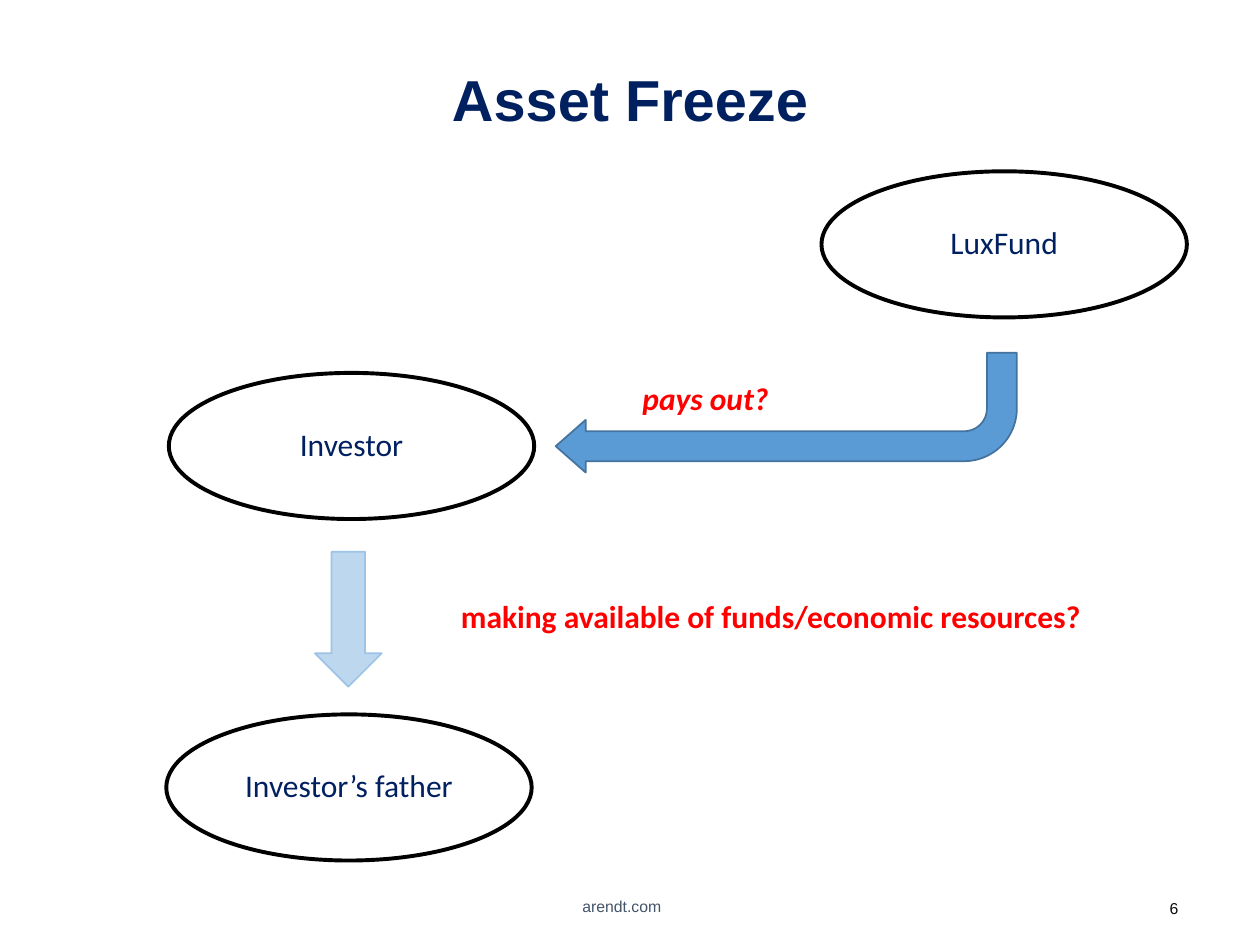
import pptx
import pptx.dml.color
import pptx.enum.shapes
import pptx.enum.text
import pptx.util

Inches = pptx.util.Inches
Pt = pptx.util.Pt
Shape = pptx.enum.shapes.MSO_SHAPE
Align = pptx.enum.text.PP_ALIGN
Anchor = pptx.enum.text.MSO_ANCHOR

NAVY = "002060"
RED = "FF0000"


def color(code):
    return pptx.dml.color.RGBColor.from_string(code)


class Diagram:
    """Holds the style and the slide being drawn."""

    body_font = "Calibri"
    head_font = "Arial"
    body_size = 18
    oval_size = (2.9, 1.16)

    def __init__(self, page):
        self.page = page

    def set_text(self, shape, text, size, code, font, align, anchor,
                 bold=False, italic=False, spacing=1.0):
        frame = shape.text_frame
        frame.word_wrap = True
        frame.vertical_anchor = anchor
        para = frame.paragraphs[0]
        para.text = text
        para.alignment = align
        para.line_spacing = spacing
        para.font.name = font
        para.font.size = Pt(size)
        para.font.bold = bold
        para.font.italic = italic
        para.font.color.rgb = color(code)

    def label(self, place, text, size=body_size, code=RED, font=body_font,
              align=Align.LEFT, anchor=Anchor.TOP, **style):
        box = self.page.shapes.add_textbox(*map(Inches, place))
        self.set_text(box, text, size, code, font, align, anchor, **style)

    def shape(self, kind, place, line, width, fill=None):
        shape = self.page.shapes.add_shape(kind, *map(Inches, place))
        shape.shadow.inherit = False
        if fill:
            shape.fill.solid()
            shape.fill.fore_color.rgb = color(fill)
        else:
            shape.fill.background()
        shape.line.color.rgb = color(line)
        shape.line.width = Pt(width)
        return shape

    def party(self, left, top, name):
        oval = self.shape(Shape.OVAL, (left, top, *self.oval_size), "000000", 2.25)
        self.set_text(oval, name, self.body_size, NAVY, self.body_font,
                      Align.CENTER, Anchor.MIDDLE, spacing=0.9)

    def arrow(self, kind, place, fill, line, adjustments=(), rotation=0):
        arrow = self.shape(kind, place, line, 1, fill)
        arrow.rotation = rotation
        for index, value in enumerate(adjustments):
            arrow.adjustments[index] = value


def main():
    deck = pptx.Presentation()
    deck.slide_width = Inches(10)
    deck.slide_height = Inches(7.5)
    diagram = Diagram(deck.slides.add_slide(deck.slide_layouts[6]))

    # Footer and title
    diagram.label((8.98, 7.08, 0.47, 0.29), "6", 9, "0C0C0C",
                  diagram.head_font, Align.RIGHT)
    diagram.label((4.1, 7.02, 1.67, 0.34), "arendt.com", 9, "44546A",
                  diagram.head_font, Align.CENTER, Anchor.MIDDLE)
    diagram.label((0.69, 0.4, 8.62, 0.83), "Asset Freeze", 33, NAVY,
                  diagram.head_font, Align.CENTER, Anchor.MIDDLE,
                  bold=True, spacing=0.9)

    # Parties
    diagram.party(6.52, 1.36, "LuxFund")
    diagram.party(1.34, 2.96, "Investor")
    diagram.party(1.32, 5.67, "Investor’s father")

    # Payment from the fund to the investor
    diagram.arrow(Shape.BENT_ARROW, (4.41, 2.8, 3.66, 0.95), "5B9BD5", "43739E",
                  (0.25, 0.22, 0.25, 0.44), 180)
    diagram.label((5, 2.96, 2.79, 0.4), "pays out?", bold=True, italic=True)

    # Funds passed on to the father
    diagram.label((3.56, 4.69, 5.36, 0.4),
                  "making available of funds/economic resources?", bold=True)
    diagram.arrow(Shape.DOWN_ARROW, (2.5, 4.38, 0.53, 1.07), "BDD7EE", "9DC3E6")

    deck.save("out.pptx")


if __name__ == "__main__":
    main()
